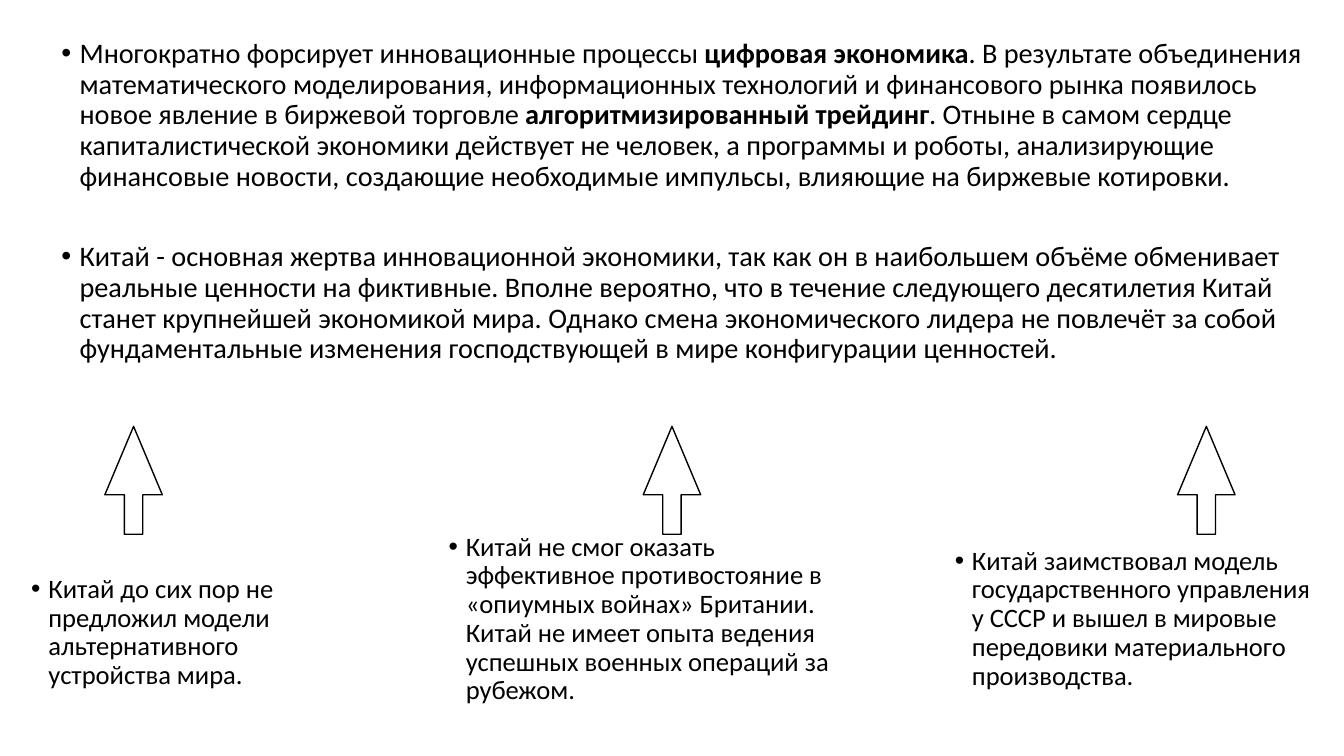
from lxml.etree import SubElement
from pptx import Presentation
from pptx.dml.color import RGBColor
from pptx.enum.shapes import MSO_SHAPE
from pptx.enum.text import MSO_ANCHOR, MSO_AUTO_SIZE, PP_ALIGN
from pptx.oxml.ns import qn
from pptx.util import Pt

PX = 9144


def color(value):
    return RGBColor.from_string(value)


def write_bullet(paragraph, text, size, indent, space_before=0, bold_parts=()):
    properties = paragraph._p.get_or_add_pPr()
    properties.set("marL", str(indent * PX))
    properties.set("indent", str(-indent * PX))
    SubElement(properties, qn("a:buFont"), typeface="Arial")
    SubElement(properties, qn("a:buChar"), char="•")
    paragraph.alignment = PP_ALIGN.LEFT
    paragraph.line_spacing = 0.9
    paragraph.space_before = Pt(space_before)
    for part in text.split("|"):
        run = paragraph.add_run()
        run.text = part
        run.font.name = "Calibri"
        run.font.size = Pt(size)
        run.font.bold = part in bold_parts
        run.font.color.rgb = color("000000")


presentation = Presentation()
presentation.slide_width = 1333 * PX
presentation.slide_height = 750 * PX
slide = presentation.slides.add_slide(presentation.slide_layouts[1])
title = slide.shapes.title.element
title.getparent().remove(title)

body = slide.placeholders[1]
body.left, body.top, body.width, body.height = [n * PX for n in (51, 34, 1251, 381)]
frame = body.text_frame
frame.word_wrap = True
frame.auto_size = MSO_AUTO_SIZE.NONE
frame.vertical_anchor = MSO_ANCHOR.TOP
write_bullet(
    frame.paragraphs[0],
    "Многократно форсирует инновационные процессы |цифровая экономика|. "
    "В результате объединения математического моделирования, информационных технологий "
    "и финансового рынка появилось новое явление в биржевой торговле "
    "|алгоритмизированный трейдинг|. Отныне в самом сердце капиталистической экономики "
    "действует не человек, а программы и роботы, анализирующие финансовые новости, "
    "создающие необходимые импульсы, влияющие на биржевые котировки.",
    size=20.2, indent=18,
    bold_parts=("цифровая экономика", "алгоритмизированный трейдинг"),
)
write_bullet(
    frame.add_paragraph(),
    "Китай - основная жертва инновационной экономики, так как он в наибольшем объёме "
    "обменивает реальные ценности на фиктивные. Вполне вероятно, что в течение следующего "
    "десятилетия Китай станет крупнейшей экономикой мира. Однако смена экономического "
    "лидера не повлечёт за собой фундаментальные изменения господствующей в мире "
    "конфигурации ценностей.",
    size=20.2, indent=18, space_before=36,
)

reasons = [
    (79, (26, 566, 309, 123),
     "Китай до сих пор не предложил модели альтернативного устройства мира."),
    (613, (440, 524, 396, 206),
     "Китай не смог оказать эффективное противостояние в «опиумных войнах» Британии. "
     "Китай не имеет опыта ведения успешных военных операций за рубежом."),
    (1143, (942, 538, 372, 178),
     "Китай заимствовал модель государственного управления у СССР и вышел в мировые "
     "передовики материального производства."),
]
for arrow_left, box, text in reasons:
    arrow = slide.shapes.add_shape(
        MSO_SHAPE.RIGHT_ARROW, arrow_left * PX, 448 * PX, 107 * PX, 57 * PX)
    arrow.rotation = 270
    arrow.adjustments[0] = 0.32
    arrow.adjustments[1] = 1.19
    arrow.shadow.inherit = False
    arrow.fill.solid()
    arrow.fill.fore_color.rgb = color("FFFFFF")
    arrow.line.color.rgb = color("000000")
    arrow.line.width = Pt(1)

    reason = slide.shapes.add_textbox(*[n * PX for n in box])
    frame = reason.text_frame
    frame.word_wrap = True
    frame.auto_size = MSO_AUTO_SIZE.SHAPE_TO_FIT_TEXT
    frame.margin_left = frame.margin_right = 5 * PX
    frame.margin_top = frame.margin_bottom = 5 * PX
    write_bullet(frame.paragraphs[0], text, size=19, indent=17)

presentation.save("out.pptx")
